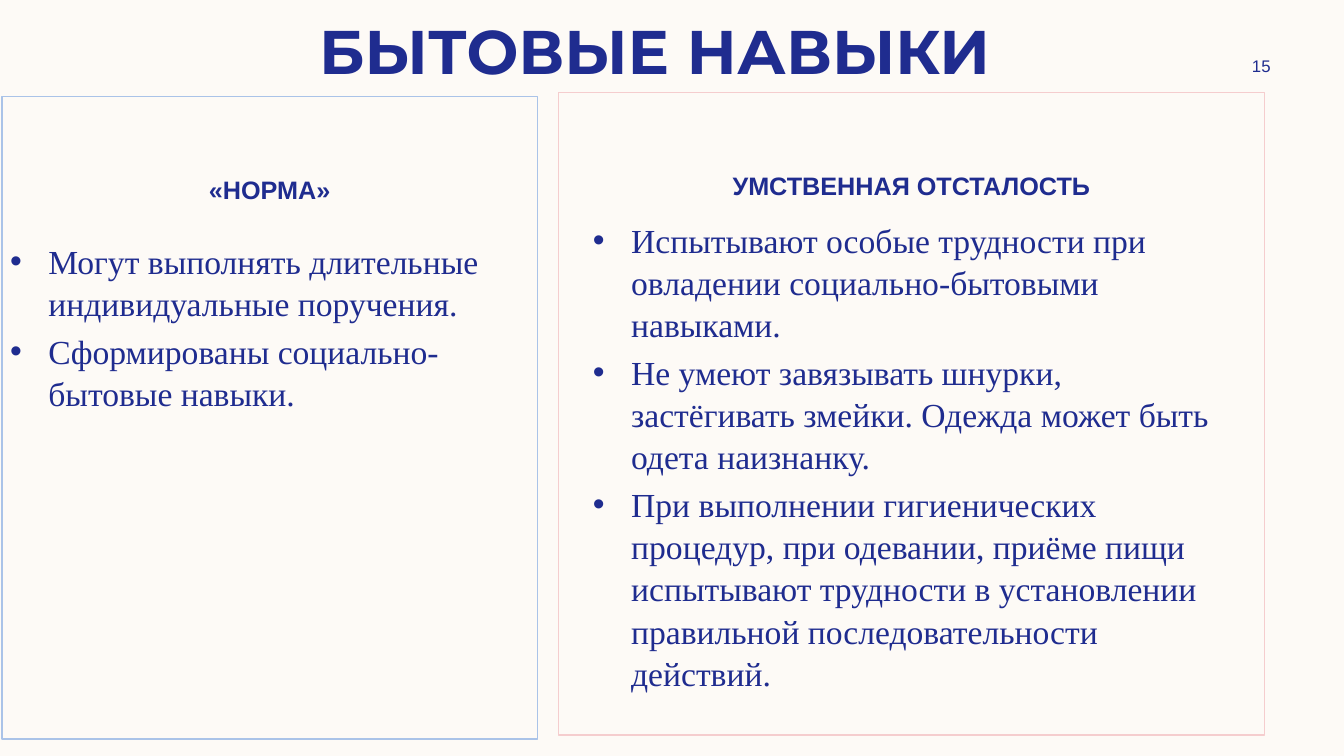
from lxml import etree
from pptx import Presentation
from pptx.dml.color import RGBColor
from pptx.enum.text import MSO_ANCHOR as Anchor, MSO_AUTO_SIZE as AutoSize, PP_ALIGN as Align
from pptx.oxml.ns import qn
from pptx.util import Inches, Pt

NAVY = RGBColor(0x1F, 0x2C, 0x8F)
CREAM = RGBColor(0xFD, 0xFA, 0xF6)
BLUE = RGBColor(0xAA, 0xC3, 0xE8)
PINK = RGBColor(0xF5, 0xCD, 0xCE)

NORM = [
    "Могут выполнять длительные индивидуальные поручения.",
    "Сформированы социально-бытовые навыки.",
]
DISABILITY = [
    "Испытывают особые трудности при овладении социально-бытовыми навыками.",
    "Не умеют завязывать шнурки, застёгивать змейки. Одежда может быть одета наизнанку.",
    "При выполнении гигиенических процедур, при одевании, приёме пищи испытывают "
    "трудности в установлении правильной последовательности действий.",
]


def place(sp, box, anchor=Anchor.TOP):
    sp.left, sp.top, sp.width, sp.height = (Inches(v) for v in box)
    tf = sp.text_frame
    tf.word_wrap = True
    tf.auto_size = AutoSize.NONE
    tf.vertical_anchor = anchor
    return tf


def add_run(p, text, font, size, bold=False):
    r = p.add_run()
    r.text = text
    r.font.name, r.font.size, r.font.bold = font, Pt(size), bold
    r.font.color.rgb = NAVY


def add_bullet(p):
    pPr = p._p.get_or_add_pPr()
    pPr.set("marL", str(Inches(0.38)))
    pPr.set("indent", str(-Inches(0.38)))
    etree.SubElement(pPr, qn("a:buFont")).set("typeface", "Arial")
    etree.SubElement(pPr, qn("a:buChar")).set("char", "•")


def add_header(slide, title, number):
    # Title
    p = place(slide.shapes.title, (0.66, 0.08, 11.67, 0.84)).paragraphs[0]
    p.alignment = Align.CENTER
    add_run(p, title, "Montserrat", 44, True)
    # Page number
    sp = slide.shapes.add_textbox(0, 0, 0, 0)
    p = place(sp, (11.97, 0.5, 1.08, 0.3), Anchor.MIDDLE).paragraphs[0]
    p.alignment = Align.CENTER
    add_run(p, number, "Arial", 12)


def fill_column(frame, body, box, body_box, color, heading, items):
    left, top, _, _ = box
    # Outlined frame with its heading
    frame.line.color.rgb = color
    frame.line.width = Pt(1)
    tf = place(frame, box)
    tf.margin_top = Inches(0.75)
    p = tf.paragraphs[0]
    p.alignment = Align.CENTER
    p.space_before = Pt(0)
    p.line_spacing = 1.05
    add_run(p, heading, "Arial", 18, True)
    # Bulleted list, offset from the frame's corner
    dx, dy, width, height = body_box
    tf = place(body, (left + dx, top + dy, width, height))
    for i, item in enumerate(items):
        p = tf.add_paragraph() if i else tf.paragraphs[0]
        p.line_spacing = 1.05
        p.space_before = Pt(3.6)
        add_bullet(p)
        add_run(p, item, "Times New Roman", 24)


def main():
    prs = Presentation()
    prs.slide_width, prs.slide_height = Inches(13.33), Inches(7.5)
    slide = prs.slides.add_slide(prs.slide_layouts[4])
    slide.background.fill.solid()
    slide.background.fill.fore_color.rgb = CREAM

    add_header(slide, "БЫТОВЫЕ НАВЫКИ", "15")
    ph = slide.placeholders
    fill_column(ph[1], ph[2], (0.02, 0.96, 5.31, 6.37), (-0.02, 1.36, 5.22, 3.81),
                BLUE, "«НОРМА»", NORM)
    fill_column(ph[3], ph[4], (5.54, 0.92, 7, 6.37), (0.24, 1.19, 6.56, 5.01),
                PINK, "УМСТВЕННАЯ ОТСТАЛОСТЬ", DISABILITY)
    prs.save("out.pptx")


if __name__ == "__main__":
    main()
